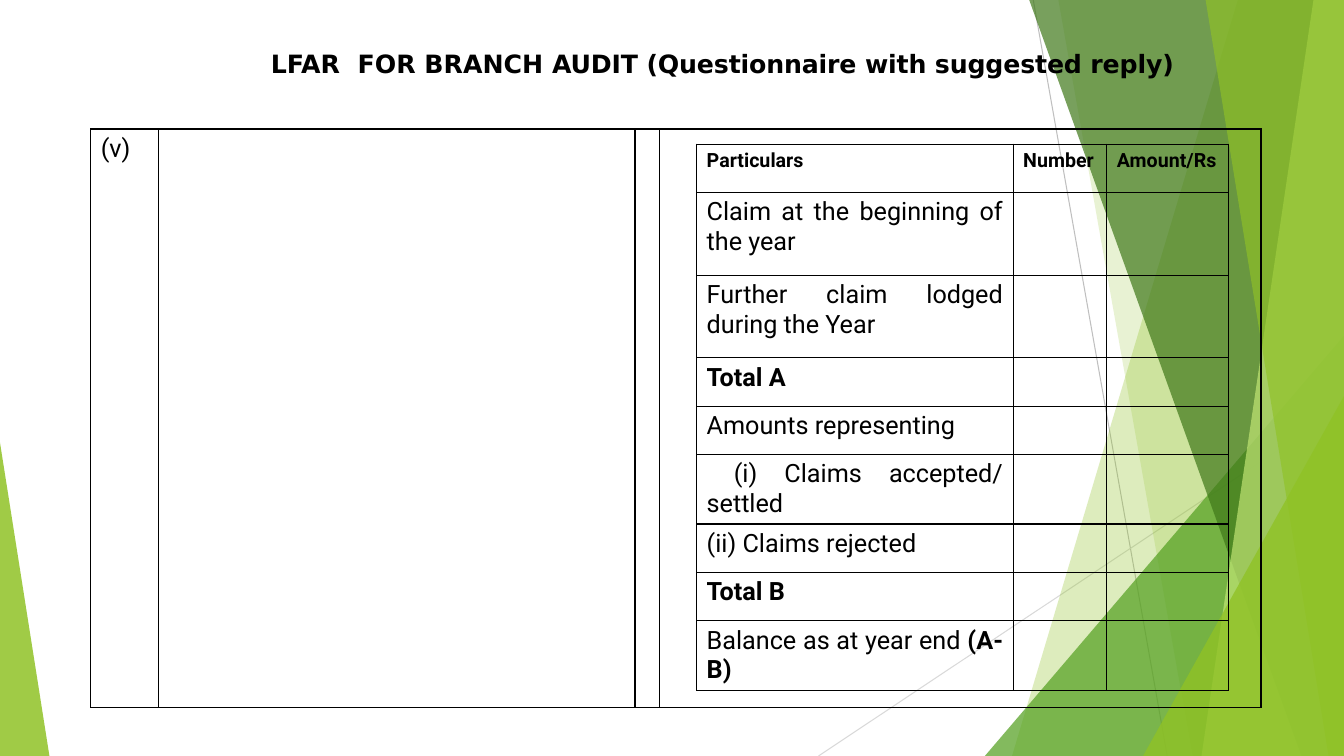
from dataclasses import dataclass

from lxml.etree import SubElement
from pptx import Presentation
from pptx.dml.color import RGBColor
from pptx.enum.shapes import MSO_CONNECTOR, MSO_SHAPE
from pptx.enum.text import MSO_ANCHOR, MSO_AUTO_SIZE, PP_ALIGN
from pptx.oxml import parse_xml
from pptx.oxml.ns import nsdecls, qn
from pptx.util import Inches, Pt


@dataclass(frozen=True)
class Theme:
    """Colours, fonts and type sizes of the slide."""

    ink: str = "000000"
    lime: str = "90C226"
    green: str = "54A021"
    forest: str = "3F7819"
    pale: str = "C0E474"
    grey: str = "BFBFBF"
    light_grey: str = "D9D9D9"
    title_font: str = "DejaVu Sans"
    body_font: str = "Roboto"
    body_size: int = 18
    header_size: int = 14
    rule_width: float = 1
    ray_width: float = 0.75


@dataclass(frozen=True)
class Box:
    """A rectangle whose regions are given in percent of its size."""

    left: int
    top: int
    width: int
    height: int

    def point(self, across, down):
        """Return the position at the given percentages."""
        return (round(self.left + self.width * across / 100),
                round(self.top + self.height * down / 100))

    def region(self, left, top, width, height):
        """Return the inner box at the given percentages."""
        return Box(*self.point(left, top), round(self.width * width / 100),
                   round(self.height * height / 100))

    def frame(self):
        """Return left, top, width and height."""
        return self.left, self.top, self.width, self.height


THEME = Theme()
QUESTION_COLUMNS = (0.67, 4.73, 0.23, 5.97)
CLAIM_COLUMNS = (3.14, 0.93, 1.21)
CLAIM_HEADINGS = ("Particulars", "Number", "Amount/Rs")
CLAIM_ROWS = (
    (0.82, "Claim at the beginning of the year", ""),
    (0.82, "Further claim lodged during the Year", ""),
    (0.48, "", "Total A"),
    (0.48, "Amounts representing", ""),
    (0.69, " (i) Claims accepted/ settled", ""),
    (0.48, "(ii) Claims rejected", ""),
    (0.48, "", "Total B"),
    (0.69, "Balance as at year end ", "(A-B)"),
)
HEADING_HEIGHT = 0.48


def tint(facet, colour, opacity):
    """Fill a facet with a see-through colour and no outline."""
    facet.shadow.inherit = False
    facet.line.fill.background()
    facet.fill.solid()
    facet.fill.fore_color.rgb = RGBColor.from_string(colour)
    colour_node = facet.element.xpath("./p:spPr/a:solidFill/a:srgbClr")[0]
    SubElement(colour_node, qn("a:alpha")).set("val", str(opacity * 1000))


def add_ray(shapes, box, start, end, colour):
    """Draw a thin straight line across the box."""
    ray = shapes.add_connector(MSO_CONNECTOR.STRAIGHT,
                               *box.point(*start), *box.point(*end))
    ray.line.color.rgb = RGBColor.from_string(colour)
    ray.line.width = Pt(THEME.ray_width)
    SubElement(ray.element.spPr, qn("a:effectLst"))


def add_pane(shapes, box, top_left, bottom_left, colour, opacity):
    """Draw a slanted pane that reaches the right edge of the box."""
    outline = shapes.build_freeform(*box.point(top_left, 0))
    outline.add_line_segments([box.point(100, 0), box.point(100, 100),
                               box.point(bottom_left, 100)])
    tint(outline.convert_to_shape(), colour, opacity)


def add_wedge(shapes, box, left, top, width, apex, colour, opacity):
    """Draw a triangle standing on the bottom edge of the box."""
    corner = box.region(left, top, width, 100 - top)
    wedge = shapes.add_shape(MSO_SHAPE.ISOSCELES_TRIANGLE, *corner.frame())
    wedge.adjustments[0] = apex
    tint(wedge, colour, opacity)


def add_backdrop(slide, box):
    """Draw the green facets along the sides of the box."""
    shapes = slide.shapes.add_group_shape().shapes
    add_ray(shapes, box, (76.88, 0), (86.85, 100), THEME.grey)
    add_ray(shapes, box, (100, 53.73), (60.9, 100), THEME.light_grey)
    add_pane(shapes, box, 92.1, 75.3, THEME.lime, 30)
    add_pane(shapes, box, 78.75, 88.73, THEME.lime, 20)
    add_wedge(shapes, box, 73.28, 44.4, 26.72, 1, THEME.green, 72)
    add_pane(shapes, box, 76.58, 96.83, THEME.forest, 70)
    add_pane(shapes, box, 97.73, 89.4, THEME.pale, 70)
    add_pane(shapes, box, 89.7, 98.85, THEME.lime, 65)
    add_wedge(shapes, box, 85.05, 52.4, 14.95, 1, THEME.lime, 80)
    add_wedge(shapes, box, 0, 58.53, 3.68, 0, THEME.lime, 85)


def set_font(paragraph, name, size, bold=None):
    """Apply the ink colour, a typeface and a size to a paragraph."""
    paragraph.font.name = name
    paragraph.font.size = Pt(size)
    paragraph.font.bold = bold
    paragraph.font.color.rgb = RGBColor.from_string(THEME.ink)


def place_title(slide, box):
    """Write the heading in the title placeholder, above the backdrop."""
    title = slide.shapes.title
    title.left, title.top, title.width, title.height = box.frame()
    title.element.getparent().append(title.element)
    frame = title.text_frame
    frame.word_wrap = True
    frame.auto_size = MSO_AUTO_SIZE.NONE
    frame.vertical_anchor = MSO_ANCHOR.TOP
    frame.margin_left = frame.margin_bottom = 0
    frame.margin_top = Inches(0.01)
    frame.margin_right = Inches(0.27)
    heading = frame.paragraphs[0]
    heading.alignment = PP_ALIGN.CENTER
    heading.space_before = Pt(4.2)
    heading.line_spacing = 1
    set_font(heading, THEME.title_font, THEME.body_size, True)
    heading.add_run().text = "LFAR  FOR BRANCH "
    subject = heading.add_run()
    subject.text = "AUDIT (Questionnaire with suggested reply)"
    subject._r.get_or_add_rPr().set("spc", "-10")


def add_ruled_table(slide, box, columns, rows):
    """Add an unfilled table with thin rules, sized by column and row weights."""
    table = slide.shapes.add_table(len(rows), len(columns), *box.frame()).table
    table.first_row = table.horz_banding = False
    for column, weight in zip(table.columns, columns):
        column.width = round(box.width * weight / sum(columns))
    for row, weight in zip(table.rows, rows):
        row.height = round(box.height * weight / sum(rows))
    for cell in table.iter_cells():
        cell.fill.background()
        properties = cell._tc.get_or_add_tcPr()
        for order, side in enumerate("LRTB"):
            properties.insert(order, parse_xml(
                f'<a:ln{side} {nsdecls("a")} w="{Pt(THEME.rule_width)}"><a:solidFill>'
                f'<a:srgbClr val="{THEME.ink}"/></a:solidFill></a:ln{side}>'))
        set_font(cell.text_frame.paragraphs[0], THEME.body_font, THEME.body_size)
    return table


def add_question(slide, box):
    """Add the questionnaire row with its item number."""
    question = add_ruled_table(slide, box, QUESTION_COLUMNS, (1,))
    question.cell(0, 0).text_frame.paragraphs[0].add_run().text = "(v)"


def add_claims(slide, box):
    """Add the table of claims with its headings and particulars."""
    heights = [HEADING_HEIGHT] + [height for height, _, _ in CLAIM_ROWS]
    claims = add_ruled_table(slide, box, CLAIM_COLUMNS, heights)
    for index, heading in enumerate(CLAIM_HEADINGS):
        label = claims.cell(0, index).text_frame.paragraphs[0]
        set_font(label, THEME.body_font, THEME.header_size, True)
        label.add_run().text = heading
    for index, (_, plain, strong) in enumerate(CLAIM_ROWS, 1):
        particular = claims.cell(index, 0).text_frame.paragraphs[0]
        particular.alignment = PP_ALIGN.JUSTIFY
        for words, bold in ((plain, False), (strong, True)):
            if words:
                run = particular.add_run()
                run.text = words
                run.font.bold = bold


def main():
    """Build the slide and save it."""
    deck = Presentation()
    deck.slide_width, deck.slide_height = Inches(13.33), Inches(7.5)
    page = Box(0, 0, deck.slide_width, deck.slide_height)
    slide = deck.slides.add_slide(deck.slide_layouts[5])
    add_backdrop(slide, page)
    place_title(slide, page.region(15.83, 6.27, 77.85, 5.33))
    add_question(slide, page.region(6.75, 17.07, 87, 76.53))
    add_claims(slide, page.region(51.83, 19.07, 39.6, 72.27))
    deck.save("out.pptx")


if __name__ == "__main__":
    main()
